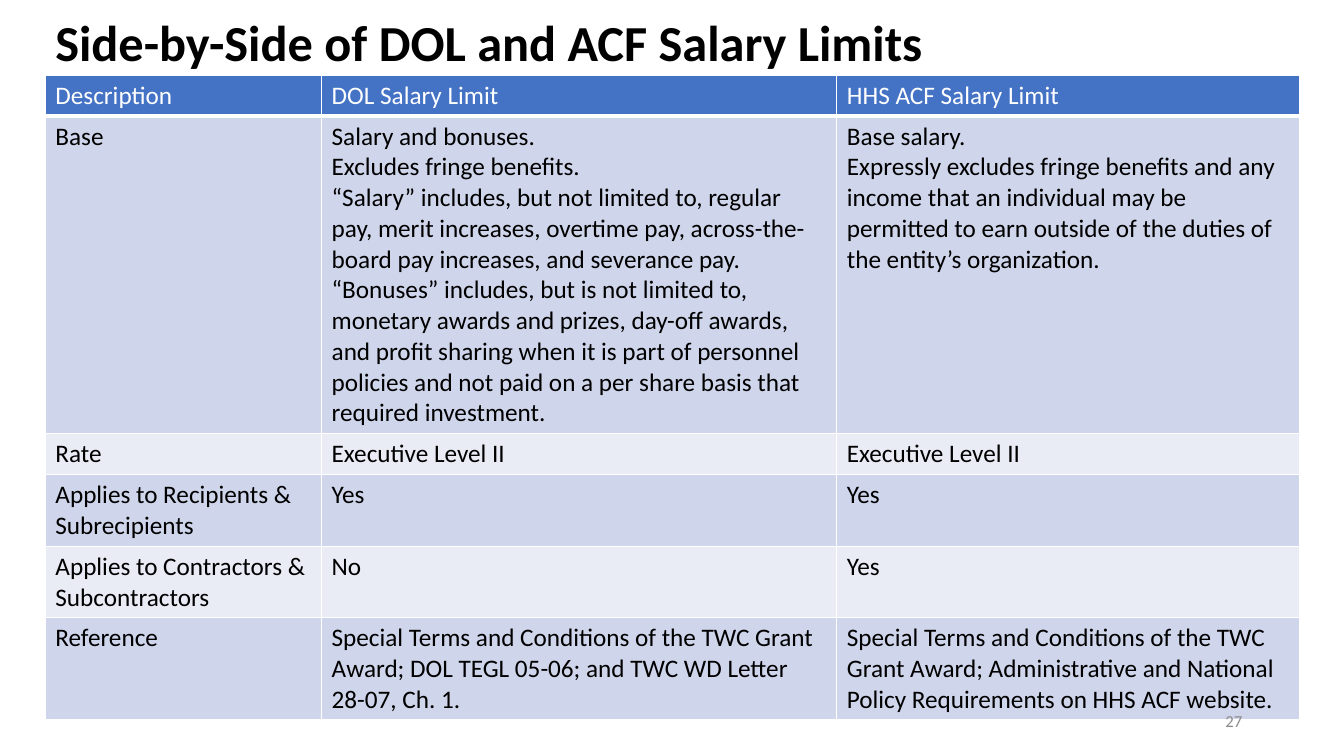
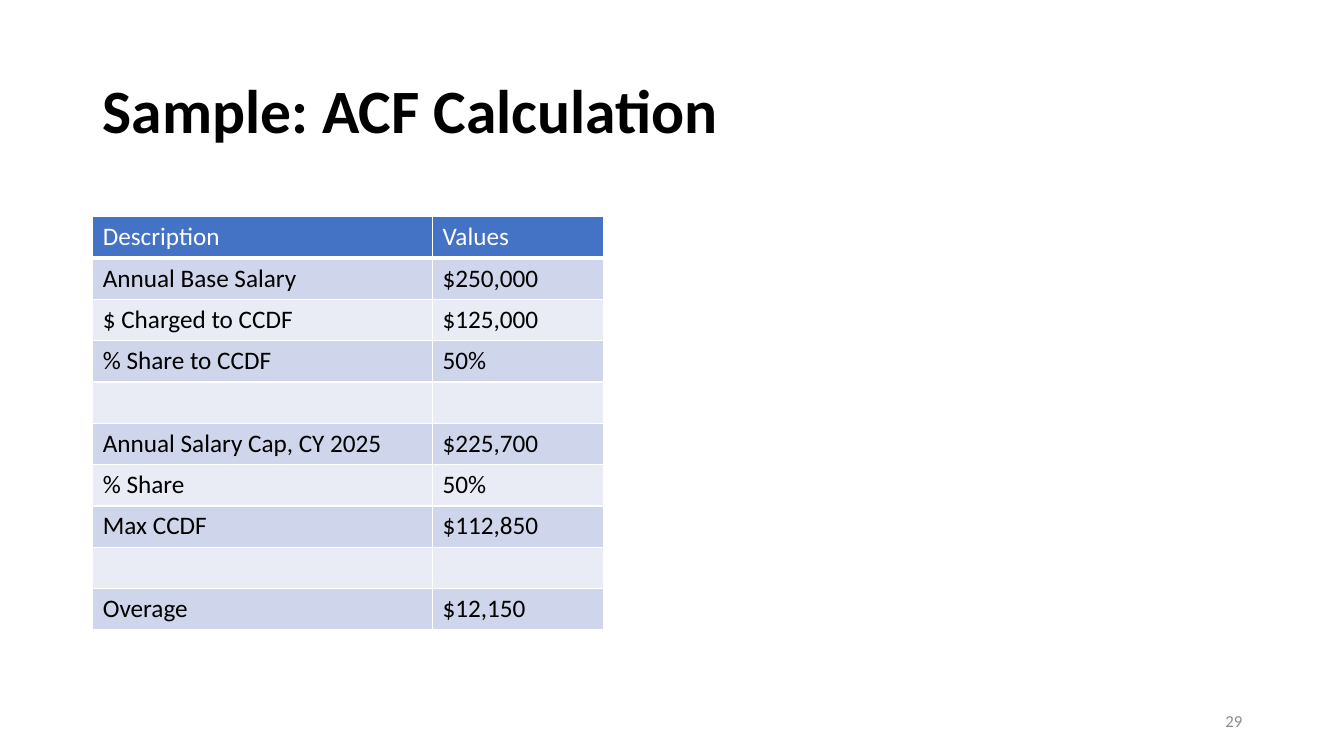
from dataclasses import dataclass

import pptx
import pptx.dml.color
import pptx.enum.text
import pptx.oxml
import pptx.oxml.ns
import pptx.util

EMU_PER_PX = 9144  # 100 px to the inch
FONT = "Calibri"
COLORS = {
    "header": "4472C4",
    "band_dark": "CFD5EA",
    "band_light": "E9EBF5",
    "white": "FFFFFF",
    "black": "000000",
    "gray": "8C8C8C",
}
ALIGN = pptx.enum.text.PP_ALIGN


@dataclass(frozen=True)
class Box:
    left: int
    top: int
    width: int
    height: int


@dataclass(frozen=True)
class TextStyle:
    size: int
    color: str
    bold: bool = False
    align: ALIGN = ALIGN.LEFT
    line_spacing: float = 1.0


@dataclass(frozen=True)
class TableSlide:
    title: str
    title_box: Box
    title_size: int
    number: int
    left: int
    top: int
    columns: list[int]
    heights: list[int]
    rows: list[list[str]]  # a line break starts a new paragraph


NUMBER_BOX = Box(942, 695, 300, 40)
NUMBER_STYLE = TextStyle(12, "gray", align=ALIGN.RIGHT)
HEADER_STYLE = TextStyle(18, "white")
BODY_STYLE = TextStyle(18, "black")

SLIDES = [
    TableSlide(
        title="Side-by-Side of DOL and ACF Salary Limits",
        title_box=Box(45, 15, 1243, 60),
        title_size=36,
        number=27,
        left=45,
        top=75,
        columns=[274, 511, 459],
        heights=[40, 315, 41, 71, 71, 101],
        rows=[
            ["Description", "DOL Salary Limit", "HHS ACF Salary Limit"],
            [
                "Base",
                "Salary and bonuses.\n"
                "Excludes fringe benefits.\n"
                "“Salary” includes, but not limited to, regular pay, merit increases, "
                "overtime pay, across-the-board pay increases, and severance pay.\n"
                "“Bonuses” includes, but is not limited to,\n"
                "monetary awards and prizes, day-off awards, and profit sharing when it "
                "is part of personnel policies and not paid on a per share basis that "
                "required investment.",
                "Base salary.\n"
                "Expressly excludes fringe benefits and any income that an individual "
                "may be permitted to earn outside of the duties of the entity’s "
                "organization.",
            ],
            ["Rate", "Executive Level II", "Executive Level II"],
            ["Applies to Recipients & Subrecipients", "Yes", "Yes"],
            ["Applies to Contractors & Subcontractors", "No", "Yes"],
            [
                "Reference",
                "Special Terms and Conditions of the TWC Grant Award; DOL TEGL 05-06; "
                "and TWC WD Letter 28-07, Ch. 1.",
                "Special Terms and Conditions of the TWC Grant Award; Administrative "
                "and National Policy Requirements on HHS ACF website.",
            ],
        ],
    ),
    TableSlide(
        title="Sample: ACF Calculation",
        title_box=Box(92, 40, 1150, 145),
        title_size=44,
        number=29,
        left=92,
        top=215,
        columns=[337, 170],
        heights=[41] * 10,
        rows=[
            ["Description", "Values"],
            ["Annual Base Salary", "$250,000"],
            ["$ Charged to CCDF", "$125,000"],
            ["% Share to CCDF", "50%"],
            ["", ""],
            ["Annual Salary Cap, CY 2025", "$225,700"],
            ["% Share", "50%"],
            ["Max CCDF", "$112,850"],
            ["", ""],
            ["Overage", "$12,150"],
        ],
    ),
]


def px(length: int) -> pptx.util.Emu:
    return pptx.util.Emu(length * EMU_PER_PX)


def rgb(name: str) -> pptx.dml.color.RGBColor:
    return pptx.dml.color.RGBColor.from_string(COLORS[name])


def write_text(frame, text: str, style: TextStyle) -> None:
    frame.text = text
    frame.word_wrap = True
    for para in frame.paragraphs:
        para.alignment = style.align
        para.line_spacing = style.line_spacing
        para.font.name = FONT
        para.font.size = pptx.util.Pt(style.size)
        para.font.bold = style.bold
        para.font.color.rgb = rgb(style.color)


def add_text(page, box: Box, text: str, style: TextStyle) -> None:
    shape = page.shapes.add_textbox(
        px(box.left), px(box.top), px(box.width), px(box.height)
    )
    write_text(shape.text_frame, text, style)
    shape.text_frame.vertical_anchor = pptx.enum.text.MSO_ANCHOR.MIDDLE


def add_borders(cell, bottom_points: int) -> None:
    properties = cell._tc.get_or_add_tcPr()
    namespace = pptx.oxml.ns.nsdecls("a")
    for side, points in (("L", 1), ("R", 1), ("T", 1), ("B", bottom_points)):
        properties.append(pptx.oxml.parse_xml(
            f'<a:ln{side} {namespace} w="{pptx.util.Pt(points)}"><a:solidFill>'
            f'<a:srgbClr val="{COLORS["white"]}"/></a:solidFill></a:ln{side}>'
        ))


def add_table(page, content: TableSlide) -> None:
    table = page.shapes.add_table(
        len(content.rows), len(content.columns), px(content.left), px(content.top),
        px(sum(content.columns)), px(sum(content.heights)),
    ).table
    for column, width in zip(table.columns, content.columns):
        column.width = px(width)
    for index, (row, height) in enumerate(zip(table.rows, content.heights)):
        row.height = px(height)
        is_header = index == 0
        band = "band_dark" if index % 2 else "band_light"
        for cell, text in zip(row.cells, content.rows[index]):
            write_text(cell.text_frame, text, HEADER_STYLE if is_header else BODY_STYLE)
            # Borders must precede the fill in the cell properties
            add_borders(cell, bottom_points=3 if is_header else 1)
            cell.fill.solid()
            cell.fill.fore_color.rgb = rgb("header" if is_header else band)


def add_slide(deck, content: TableSlide) -> None:
    page = deck.slides.add_slide(deck.slide_layouts[6])
    title_style = TextStyle(content.title_size, "black", bold=True, line_spacing=0.9)
    add_text(page, content.title_box, content.title, title_style)
    add_table(page, content)
    add_text(page, NUMBER_BOX, str(content.number), NUMBER_STYLE)


def main() -> None:
    deck = pptx.Presentation()
    deck.slide_width, deck.slide_height = px(1333), px(750)
    for content in SLIDES:
        add_slide(deck, content)
    deck.save("out.pptx")


if __name__ == "__main__":
    main()
